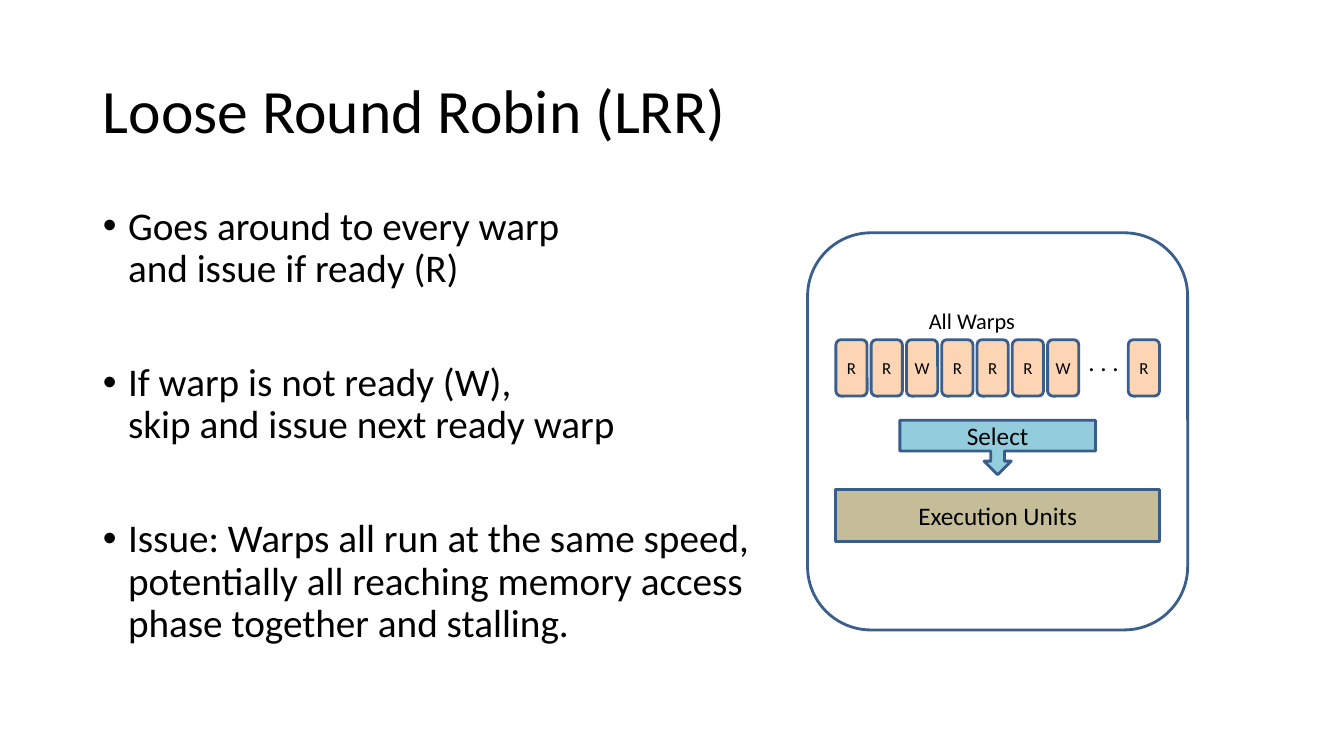
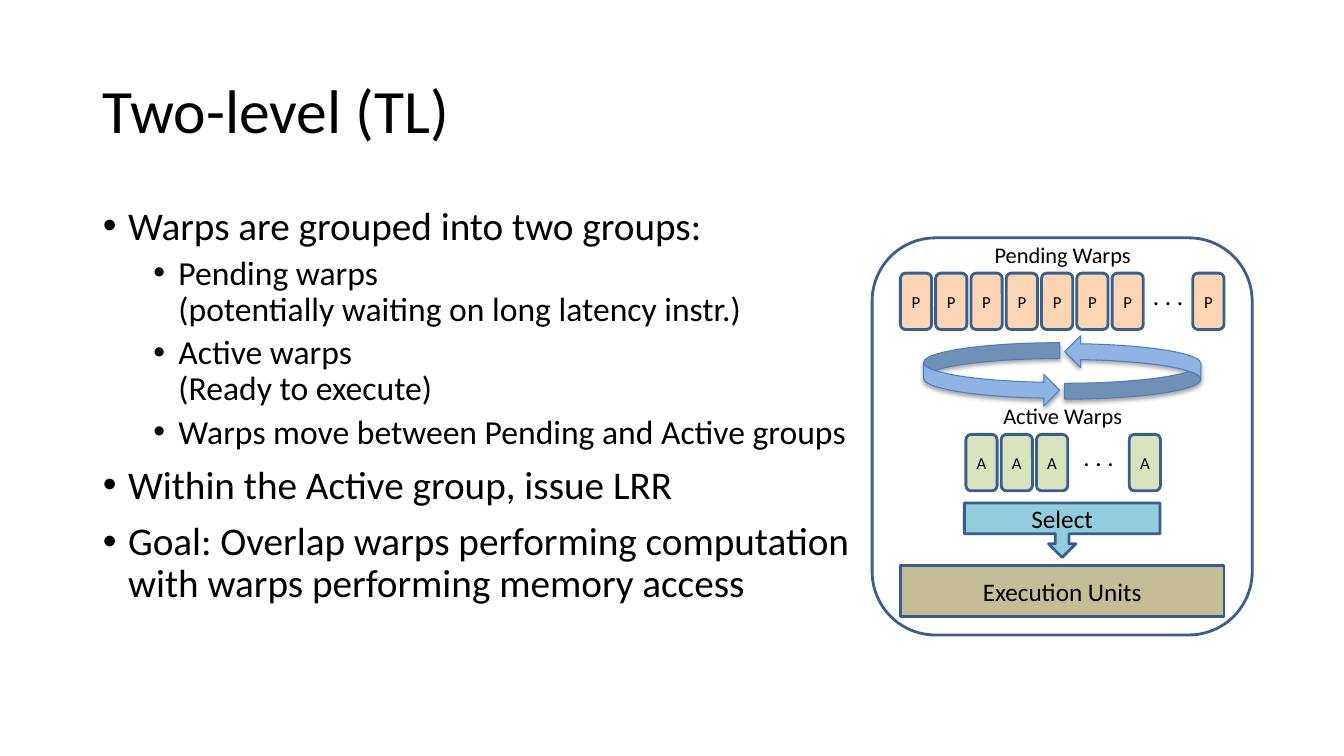
from dataclasses import dataclass

from lxml import etree
from pptx import Presentation
from pptx.dml.color import RGBColor
from pptx.enum import shapes, text
from pptx.oxml import ns
from pptx.util import Inches, Pt


@dataclass(frozen=True)
class Theme:
    font: str = "Calibri"
    ink: str = "000000"
    outline: str = "3A5F8C"
    block_outline: str = "385D8A"
    cycle_outline: str = "4B7EBC"
    peach: str = "FCD5B5"
    green: str = "D7E4BD"
    teal: str = "93CDDD"
    khaki: str = "C4BD97"
    blue: str = "8EB4E3"
    title_size: int = 44
    body_sizes: tuple = (28, 24)
    block_size: int = 18
    label_size: int = 16
    warp_size: int = 12


theme = Theme()
preset = shapes.MSO_SHAPE
WARP_WIDTH, WARP_HEIGHT, WARP_PITCH = 0.31, 0.56, 0.35
PANEL_WIDTH, PANEL_HEIGHT, PANEL_MARGIN = 3.77, 3.94, 0.28
SELECT_WIDTH = 1.94


def write(paragraph, words, size):
    for number, line in enumerate(words.split("\n")):
        if number:
            paragraph.add_line_break()
        run = paragraph.add_run()
        run.text = line
        run.font.name = theme.font
        run.font.size = Pt(size)
        run.font.color.rgb = RGBColor.from_string(theme.ink)


def add_box(slide, kind, left, top, width, height, words="", size=theme.block_size,
            fill=None, line=None, weight=2):
    place = [Inches(length) for length in (left, top, width, height)]
    if kind is None:
        shape = slide.shapes.add_textbox(*place)
    else:
        shape = slide.shapes.add_shape(kind, *place)
        shape.shadow.inherit = False
        shape.line.color.rgb = RGBColor.from_string(line)
        shape.line.width = Pt(weight)
        if fill:
            shape.fill.solid()
            shape.fill.fore_color.rgb = RGBColor.from_string(fill)
        else:
            shape.fill.background()
    frame = shape.text_frame
    frame.word_wrap = kind is not None
    frame.vertical_anchor = text.MSO_ANCHOR.MIDDLE
    frame.margin_left = frame.margin_right = frame.margin_top = frame.margin_bottom = 0
    if words:
        frame.paragraphs[0].alignment = text.PP_ALIGN.CENTER
        write(frame.paragraphs[0], words, size)
    return shape


lessons = [
    {
        "title": "Loose Round Robin (LRR)",
        "space_before": (51, 5),
        "bullets": [
            (0, "Goes around to every warp\nand issue if ready (R)"),
            (0, "If warp is not ready (W),\nskip and issue next ready warp"),
            (0, "Issue: Warps all run at the same speed,\n"
                "potentially all reaching memory access\nphase together and stalling."),
        ],
        "panel": (8.01, 2.31),
        "rows": [("All Warps", 9.64, 8.29, 3.37, "RRWRRRW", 11.19, "R", theme.peach)],
        "cycle": [],
        "select_top": 4.17,
        "units_top": 4.86,
    },
    {
        "title": "Two-level (TL)",
        "space_before": (10, 5),
        "bullets": [
            (0, "Warps are grouped into two groups:"),
            (1, "Pending warps\n(potentially waiting on long latency instr.)"),
            (1, "Active warps\n(Ready to execute)"),
            (1, "Warps move between Pending and Active groups"),
            (0, "Within the Active group, issue LRR"),
            (0, "Goal: Overlap warps performing computation\n"
                "with warps performing memory access"),
        ],
        "panel": (8.65, 2.36),
        "rows": [
            ("Pending Warps", 10.54, 8.93, 2.71, "PPPPPPP", 11.83, "P", theme.peach),
            ("Active Warps", 10.54, 9.58, 4.31, "AAA", 11.2, "A", theme.green),
        ],
        "cycle": [(9.16, 3.4, 0), (10.56, 3.33, 180)],
        "select_top": 4.99,
        "units_top": 5.61,
    },
]

presentation = Presentation()
presentation.slide_width = Inches(13.33)
presentation.slide_height = Inches(7.5)
layout = presentation.slide_layouts[1]
for placeholder, top, height in zip(layout.placeholders, (0.4, 2), (1.45, 4.76)):
    placeholder.left, placeholder.width = Inches(0.92), Inches(11.5)
    placeholder.top, placeholder.height = Inches(top), Inches(height)

for lesson in lessons:
    slide = presentation.slides.add_slide(layout)
    title = slide.shapes.title.text_frame
    title.vertical_anchor = text.MSO_ANCHOR.MIDDLE
    title.auto_size = text.MSO_AUTO_SIZE.NONE
    title.paragraphs[0].alignment = text.PP_ALIGN.LEFT
    title.paragraphs[0].line_spacing = 0.9
    write(title.paragraphs[0], lesson["title"], theme.title_size)

    body = slide.placeholders[1].text_frame
    body.auto_size = text.MSO_AUTO_SIZE.NONE
    for number, (level, words) in enumerate(lesson["bullets"]):
        paragraph = body.add_paragraph() if number else body.paragraphs[0]
        paragraph.level = level
        paragraph.line_spacing = 0.9
        paragraph.space_before = Pt(lesson["space_before"][level] if number else 10)
        properties = paragraph._p.get_or_add_pPr()
        properties.set("marL", str(Inches(0.25 + 0.5 * level)))
        properties.set("indent", str(Inches(-0.25)))
        etree.SubElement(properties, ns.qn("a:buFont"), typeface="Arial")
        etree.SubElement(properties, ns.qn("a:buChar"), char="•")
        write(paragraph, words, theme.body_sizes[level])

    panel_left, panel_top = lesson["panel"]
    add_box(slide, preset.ROUNDED_RECTANGLE, panel_left, panel_top,
            PANEL_WIDTH, PANEL_HEIGHT, line=theme.outline)

    for left, top, rotation in lesson["cycle"]:
        arrow = add_box(slide, preset.CURVED_RIGHT_ARROW, left, top, 1.35, 0.63,
                        fill=theme.blue, line=theme.cycle_outline, weight=0.75)
        arrow.rotation = rotation
        effects = arrow._element.spPr.find(ns.qn("a:effectLst"))
        shadow = etree.SubElement(effects, ns.qn("a:outerShdw"), blurRad=str(Pt(3.1)),
                                  dist=str(Pt(1.8)), dir="5400000", rotWithShape="0")
        shade = etree.SubElement(shadow, ns.qn("a:srgbClr"), val=theme.ink)
        etree.SubElement(shade, ns.qn("a:alpha"), val="35000")

    for label, center, left, top, states, last_left, last_state, fill in lesson["rows"]:
        add_box(slide, None, center - 0.8, top - 0.37, 1.6, 0.37, label, theme.label_size)
        warps = [(left + WARP_PITCH * number, state) for number, state in enumerate(states)]
        gap_left = warps[-1][0] + WARP_WIDTH
        for warp_left, state in warps + [(last_left, last_state)]:
            add_box(slide, preset.ROUNDED_RECTANGLE, warp_left, top, WARP_WIDTH, WARP_HEIGHT,
                    state, theme.warp_size, fill, theme.outline)
        add_box(slide, None, gap_left, top + 0.02, last_left - gap_left, 0.4, ". . .")

    select = add_box(slide, preset.DOWN_ARROW_CALLOUT,
                     panel_left + (PANEL_WIDTH - SELECT_WIDTH) / 2, lesson["select_top"],
                     SELECT_WIDTH, 0.54, "Select", fill=theme.teal, line=theme.block_outline)
    for number, ratio in enumerate((0.25, 0.25, 0.25, 0.565)):
        select.adjustments[number] = ratio
    add_box(slide, preset.RECTANGLE, panel_left + PANEL_MARGIN, lesson["units_top"],
            PANEL_WIDTH - 2 * PANEL_MARGIN, 0.51, "Execution Units",
            fill=theme.khaki, line=theme.block_outline)

presentation.save("out.pptx")
